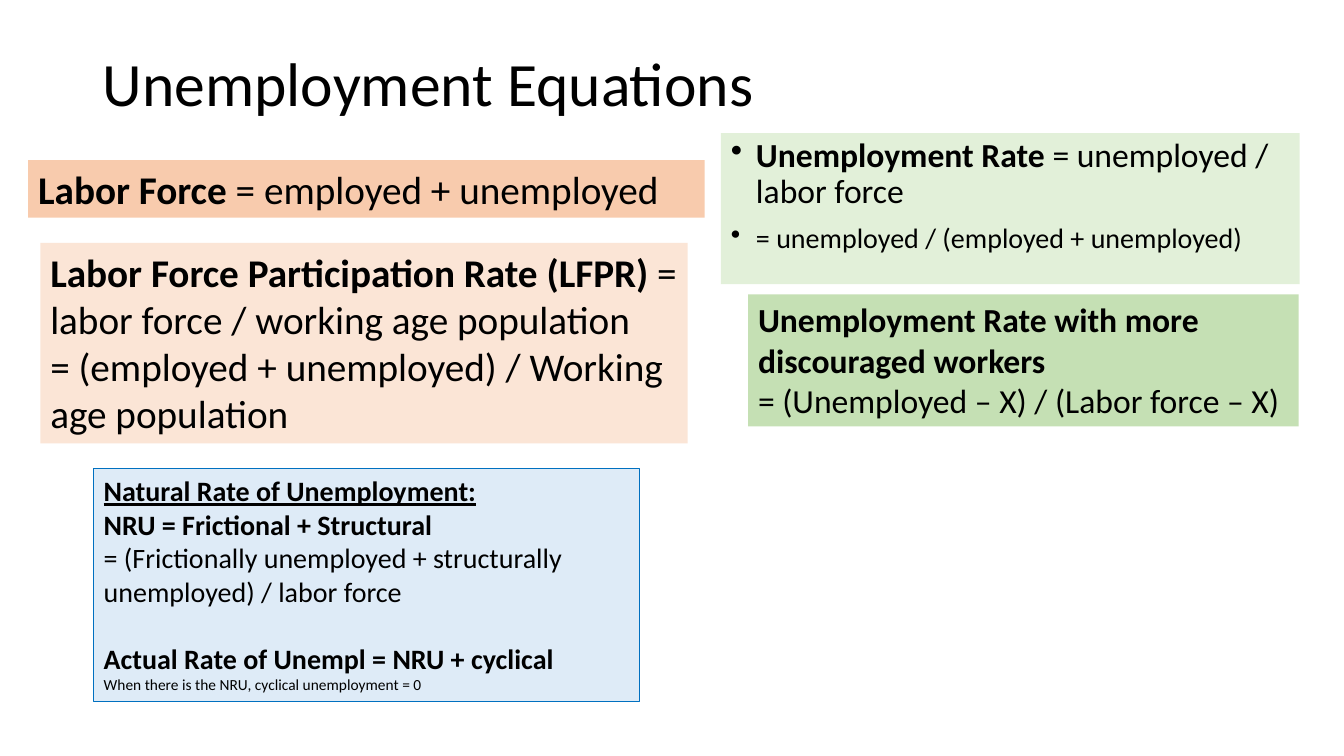
from dataclasses import dataclass

from lxml import etree
from pptx import Presentation
from pptx.dml.color import RGBColor
from pptx.enum.text import MSO_ANCHOR, MSO_AUTO_SIZE, PP_ALIGN
from pptx.oxml.ns import qn
from pptx.util import Inches, Pt

FONT = "Calibri"
BLACK = "000000"
TITLE_ONLY = 5


@dataclass
class Line:
    """One paragraph: a bold part followed by a regular part."""
    size: int
    bold: str = ""
    regular: str = ""
    underline: bool = False
    space_before: int = 0


def color(value):
    return RGBColor.from_string(value)


def style_font(font, size):
    font.name = FONT
    font.size = Pt(size)
    font.color.rgb = color(BLACK)


def add_bullet(para):
    properties = para._p.get_or_add_pPr()
    properties.set("marL", str(Inches(0.25)))
    properties.set("indent", str(-Inches(0.25)))
    bullet = etree.Element(qn("a:buChar"), char="•")
    defaults = properties.find(qn("a:defRPr"))
    defaults.addprevious(bullet)


def write_line(para, line):
    style_font(para.font, line.size)
    para.font.underline = line.underline
    para.space_before = Pt(line.space_before)
    parts = [(text, bold) for text, bold in ((line.bold, True), (line.regular, False)) if text]
    if len(parts) == 1:
        para.font.bold = parts[0][1]
    for text, bold in parts:
        span = para.add_run()
        span.text = text
        if len(parts) > 1:
            span.font.bold = bold


def add_equation_box(slide, box, fill, lines, outline=None, bulleted=False):
    panel = slide.shapes.add_textbox(*map(Inches, box))
    panel.fill.solid()
    panel.fill.fore_color.rgb = color(fill)
    if outline:
        panel.line.color.rgb = color(outline)
        panel.line.width = Pt(0.75)
    frame = panel.text_frame
    frame.word_wrap = True
    frame.auto_size = MSO_AUTO_SIZE.NONE if bulleted else MSO_AUTO_SIZE.SHAPE_TO_FIT_TEXT
    for index, line in enumerate(lines):
        para = frame.add_paragraph() if index else frame.paragraphs[0]
        write_line(para, line)
        if bulleted:
            para.line_spacing = 0.9
            add_bullet(para)


def set_title(slide, box, text):
    title = slide.shapes.title
    title.left, title.top, title.width, title.height = map(Inches, box)
    frame = title.text_frame
    frame.text = text
    frame.vertical_anchor = MSO_ANCHOR.MIDDLE
    para = frame.paragraphs[0]
    para.alignment = PP_ALIGN.LEFT
    para.line_spacing = 0.9
    style_font(para.font, 44)


def add_unemployment_rates(slide):
    add_equation_box(slide, (7.15, 1.32, 5.74, 1.5), "E2F0D9", [
        Line(24, "Unemployment Rate ", "= unemployed / labor force", space_before=10),
        Line(20, regular="= unemployed / (employed + unemployed)", space_before=10),
    ], bulleted=True)
    add_equation_box(slide, (7.42, 2.92, 5.46, 1.31), "C5E0B4", [
        Line(24, "Unemployment Rate with more discouraged workers"),
        Line(24, regular="= (Unemployed – X) / (Labor force – X)"),
    ])


def add_labor_force(slide):
    add_equation_box(slide, (0.4, 2.41, 6.42, 1.99), "FBE5D6", [
        Line(28, "Labor Force Participation Rate (LFPR) ",
             "= labor force / working age population"),
        Line(28, regular="= (employed + unemployed) / Working age population"),
    ])
    add_equation_box(slide, (0.28, 1.59, 6.71, 0.57), "F8CBAD", [
        Line(28, "Labor Force ", "= employed + unemployed"),
    ])


def add_natural_rate(slide):
    add_equation_box(slide, (0.93, 4.65, 5.41, 2.31), "DEEBF7", [
        Line(20, "Natural Rate of Unemployment:", underline=True),
        Line(20, "NRU = Frictional + Structural"),
        Line(20, regular="= (Frictionally unemployed + structurally unemployed) / labor force"),
        Line(20, "Actual Rate of Unempl = NRU + cyclical", space_before=24),
        Line(11, regular="When there is the NRU, cyclical unemployment = 0"),
    ], outline="0070C0")


def main():
    deck = Presentation()
    deck.slide_width, deck.slide_height = Inches(13.33), Inches(7.5)
    slide = deck.slides.add_slide(deck.slide_layouts[TITLE_ONLY])
    set_title(slide, (0.92, 0.4, 11.5, 0.91), "Unemployment Equations")
    add_unemployment_rates(slide)
    add_natural_rate(slide)
    add_labor_force(slide)
    deck.save("out.pptx")


if __name__ == "__main__":
    main()
